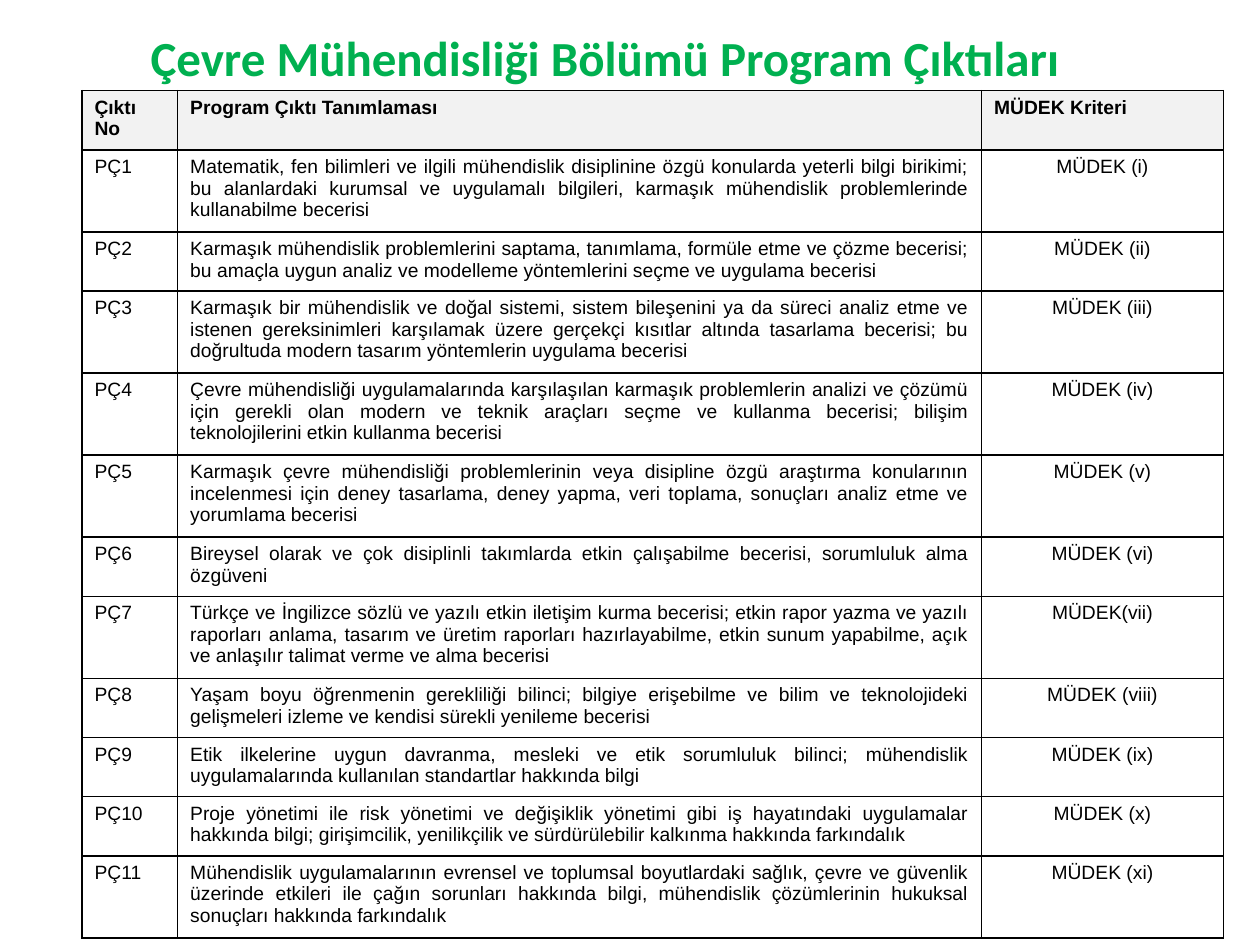
from lxml.etree import SubElement
from pptx import Presentation
from pptx.dml.color import RGBColor
from pptx.enum.text import MSO_ANCHOR, PP_ALIGN as AL
from pptx.oxml.ns import qn
from pptx.util import Inches, Pt

TITLE = "Çevre Mühendisliği Bölümü Program Çıktıları"
HEADER = ("Çıktı No", "Program Çıktı Tanımlaması", "MÜDEK Kriteri")
# Description, criterion, lines of text
OUTCOMES = [
    ("Matematik, fen bilimleri ve ilgili mühendislik disiplinine özgü konularda yeterli bilgi birikimi; "
     "bu alanlardaki kurumsal ve uygulamalı bilgileri, karmaşık mühendislik problemlerinde kullanabilme becerisi",
     "MÜDEK (i)", 3),
    ("Karmaşık mühendislik problemlerini saptama, tanımlama, formüle etme ve çözme becerisi; "
     "bu amaçla uygun analiz ve modelleme yöntemlerini seçme ve uygulama becerisi",
     "MÜDEK (ii)", 2),
    ("Karmaşık bir mühendislik ve doğal sistemi, sistem bileşenini ya da süreci analiz etme ve "
     "istenen gereksinimleri karşılamak üzere gerçekçi kısıtlar altında tasarlama becerisi; "
     "bu doğrultuda modern tasarım yöntemlerin uygulama becerisi",
     "MÜDEK (iii)", 3),
    ("Çevre mühendisliği uygulamalarında karşılaşılan karmaşık problemlerin analizi ve çözümü "
     "için gerekli olan modern ve teknik araçları seçme ve kullanma becerisi; "
     "bilişim teknolojilerini etkin kullanma becerisi",
     "MÜDEK (iv)", 3),
    ("Karmaşık çevre mühendisliği problemlerinin veya disipline özgü araştırma konularının "
     "incelenmesi için deney tasarlama, deney yapma, veri toplama, sonuçları analiz etme ve yorumlama becerisi",
     "MÜDEK (v)", 3),
    ("Bireysel olarak ve çok disiplinli takımlarda etkin çalışabilme becerisi, sorumluluk alma özgüveni",
     "MÜDEK (vi)", 2),
    ("Türkçe ve İngilizce sözlü ve yazılı etkin iletişim kurma becerisi; etkin rapor yazma ve yazılı "
     "raporları anlama, tasarım ve üretim raporları hazırlayabilme, etkin sunum yapabilme, "
     "açık ve anlaşılır talimat verme ve alma becerisi",
     "MÜDEK(vii)", 3),
    ("Yaşam boyu öğrenmenin gerekliliği bilinci; bilgiye erişebilme ve bilim ve teknolojideki "
     "gelişmeleri izleme ve kendisi sürekli yenileme becerisi",
     "MÜDEK (viii)", 2),
    ("Etik ilkelerine uygun davranma, mesleki ve etik sorumluluk bilinci; mühendislik "
     "uygulamalarında kullanılan standartlar hakkında bilgi",
     "MÜDEK (ix)", 2),
    ("Proje yönetimi ile risk yönetimi ve değişiklik yönetimi gibi iş hayatındaki uygulamalar "
     "hakkında bilgi; girişimcilik, yenilikçilik ve sürdürülebilir kalkınma hakkında farkındalık",
     "MÜDEK (x)", 2),
    ("Mühendislik uygulamalarının evrensel ve toplumsal boyutlardaki sağlık, çevre ve güvenlik "
     "üzerinde etkileri ile çağın sorunları hakkında bilgi, mühendislik çözümlerinin hukuksal "
     "sonuçları hakkında farkındalık",
     "MÜDEK (xi)", 3),
]
COL_WIDTHS = (0.76, 6.38, 1.92)
ROW_HEIGHTS = {2: 0.47, 3: 0.65}  # by lines of text


def rgb(color):
    return RGBColor.from_string(color)


def write(tf, text, size=11, font="Arial", color="000000", bold=False, align=AL.JUSTIFY):
    p = tf.paragraphs[0]
    p.alignment = align
    r = p.add_run()
    r.text = text
    r.font.size, r.font.name, r.font.bold = Pt(size), font, bold
    r.font.color.rgb = rgb(color)


def add_borders(cell, color="000000", width=1):
    tcPr = cell._tc.get_or_add_tcPr()
    for i, side in enumerate(("lnL", "lnR", "lnT", "lnB")):
        ln = SubElement(tcPr, qn(f"a:{side}"), w=str(Pt(width)))
        fill = SubElement(ln, qn("a:solidFill"))
        SubElement(fill, qn("a:srgbClr"), val=color)
        tcPr.remove(ln)
        tcPr.insert(i, ln)  # borders come before the fill


prs = Presentation()
prs.slide_width, prs.slide_height = Inches(10), Inches(7.5)
s = prs.slides.add_slide(prs.slide_layouts[6])

# Title
tf = s.shapes.add_textbox(Inches(0.65), Inches(0.17), Inches(8.3), Inches(0.57)).text_frame
tf.word_wrap = True
tf.vertical_anchor = MSO_ANCHOR.MIDDLE
write(tf, TITLE, size=28, font="Calibri", color="00B050", bold=True, align=AL.CENTER)

# Outcome table
rows = [HEADER] + [(f"PÇ{n}", text, criterion)
                   for n, (text, criterion, _) in enumerate(OUTCOMES, 1)]
heights = [ROW_HEIGHTS[n] for n in [2] + [lines for _, _, lines in OUTCOMES]]
table = s.shapes.add_table(len(rows), len(HEADER), Inches(0.65), Inches(0.72),
                           Inches(sum(COL_WIDTHS)), Inches(sum(heights))).table
for col, width in zip(table.columns, COL_WIDTHS):
    col.width = Inches(width)
for i, (row, height) in enumerate(zip(rows, heights)):
    table.rows[i].height = Inches(height)
    for j, text in enumerate(row):
        cell = table.cell(i, j)
        head = i == 0
        cell.fill.solid()
        cell.fill.fore_color.rgb = rgb("F2F2F2" if head else "FFFFFF")
        add_borders(cell)
        write(cell.text_frame, text, bold=head,
              align=AL.CENTER if j == 2 and not head else AL.JUSTIFY)

prs.save("out.pptx")
